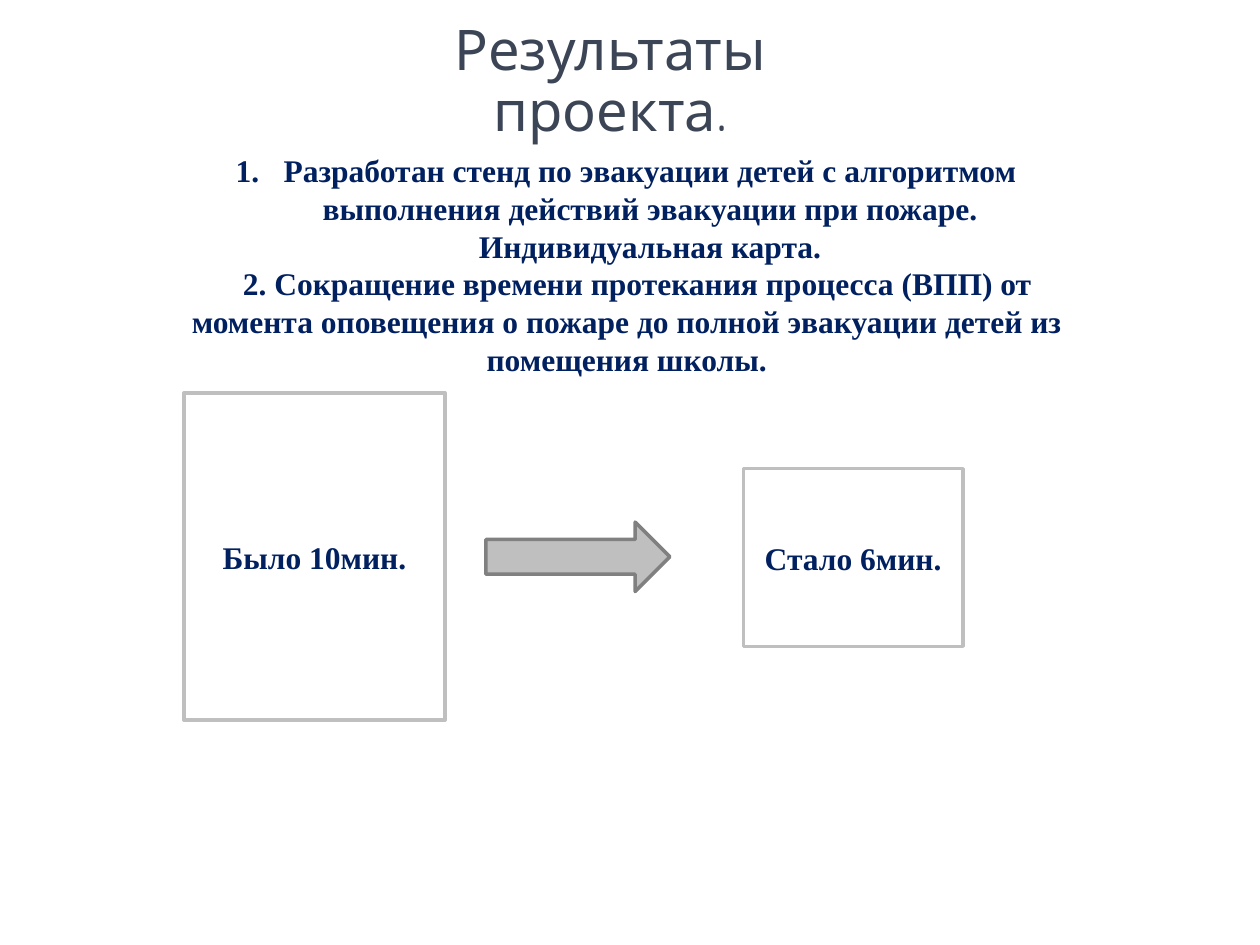
from lxml import etree
from pptx import Presentation
from pptx import util as u
from pptx.dml.color import RGBColor
from pptx.enum import shapes, text
from pptx.oxml.ns import qn

COLORS = {
    "title": "3B4555",
    "text": "002060",
    "box": "FFFFFF",
    "box_line": "BFBFBF",
    "arrow": "BFBFBF",
    "arrow_line": "808080",
}


def write(paragraph, content, font="Times New Roman", size=18, color="text",
          bold=True, left=0, indent=0, numbered=False):
    """Write centred text with the given indents and font."""
    properties = paragraph._p.get_or_add_pPr()
    properties.set("marL", str(u.Cm(left)))
    properties.set("indent", str(u.Cm(indent)))
    if numbered:
        etree.SubElement(properties, qn("a:buFont"), typeface="+mj-lt")
        etree.SubElement(properties, qn("a:buAutoNum"), type="arabicPeriod")
    paragraph.alignment = text.PP_ALIGN.CENTER
    run = paragraph.add_run()
    run.text = content
    run.font.name = font
    run.font.size = u.Pt(size)
    run.font.bold = bold
    run.font.color.rgb = RGBColor.from_string(COLORS[color])


def add_figure(kind, left, top, width, height, fill, line):
    """Add a filled, outlined shape without a shadow."""
    shape = slide.shapes.add_shape(kind, u.Cm(left), u.Cm(top), u.Cm(width), u.Cm(height))
    shape.shadow.inherit = False
    shape.fill.solid()
    shape.fill.fore_color.rgb = RGBColor.from_string(COLORS[fill])
    shape.line.color.rgb = RGBColor.from_string(COLORS[line])
    shape.line.width = u.Pt(2)
    return shape


presentation = Presentation()
presentation.slide_width = u.Cm(25.4)
presentation.slide_height = u.Cm(19.05)
slide = presentation.slides.add_slide(presentation.slide_layouts[6])

# Title
title = slide.shapes.add_textbox(u.Cm(6.65), u.Cm(0.33), u.Cm(11.3), u.Cm(3))
title.text_frame.word_wrap = True
title_paragraph = title.text_frame.paragraphs[0]
title_paragraph.line_spacing = 0.9
write(title_paragraph, "Результаты проекта.", font="Quicksand", size=32,
      color="title", bold=False)

# Project results
results = slide.shapes.add_textbox(u.Cm(3.3), u.Cm(2.92), u.Cm(18.59), u.Cm(4.88))
results.text_frame.word_wrap = True
write(results.text_frame.paragraphs[0],
      "Разработан стенд по эвакуации детей с алгоритмом выполнения действий "
      "эвакуации при пожаре. Индивидуальная карта.",
      left=1.02, indent=-0.97, numbered=True)
write(results.text_frame.add_paragraph(),
      "2. Сокращение времени протекания процесса (ВПП) от момента оповещения "
      "о пожаре до полной эвакуации детей из помещения школы.",
      left=0.08, indent=0.43)

# Time before and after
for content, left, top, width, height in (
    ("Было 10мин.", 3.71, 7.92, 5.26, 6.6),
    ("Стало 6мин.", 14.99, 9.45, 4.42, 3.58),
):
    box = add_figure(shapes.MSO_SHAPE.RECTANGLE, left, top, width, height, "box", "box_line")
    box.text_frame.word_wrap = True
    box.text_frame.vertical_anchor = text.MSO_ANCHOR.MIDDLE
    write(box.text_frame.paragraphs[0], content)

# Arrow between the boxes, turned to point right
arrow = add_figure(shapes.MSO_SHAPE.DOWN_ARROW, 10.95, 9.37, 1.4, 3.71, "arrow", "arrow_line")
arrow.rotation = 270

presentation.save("out.pptx")
